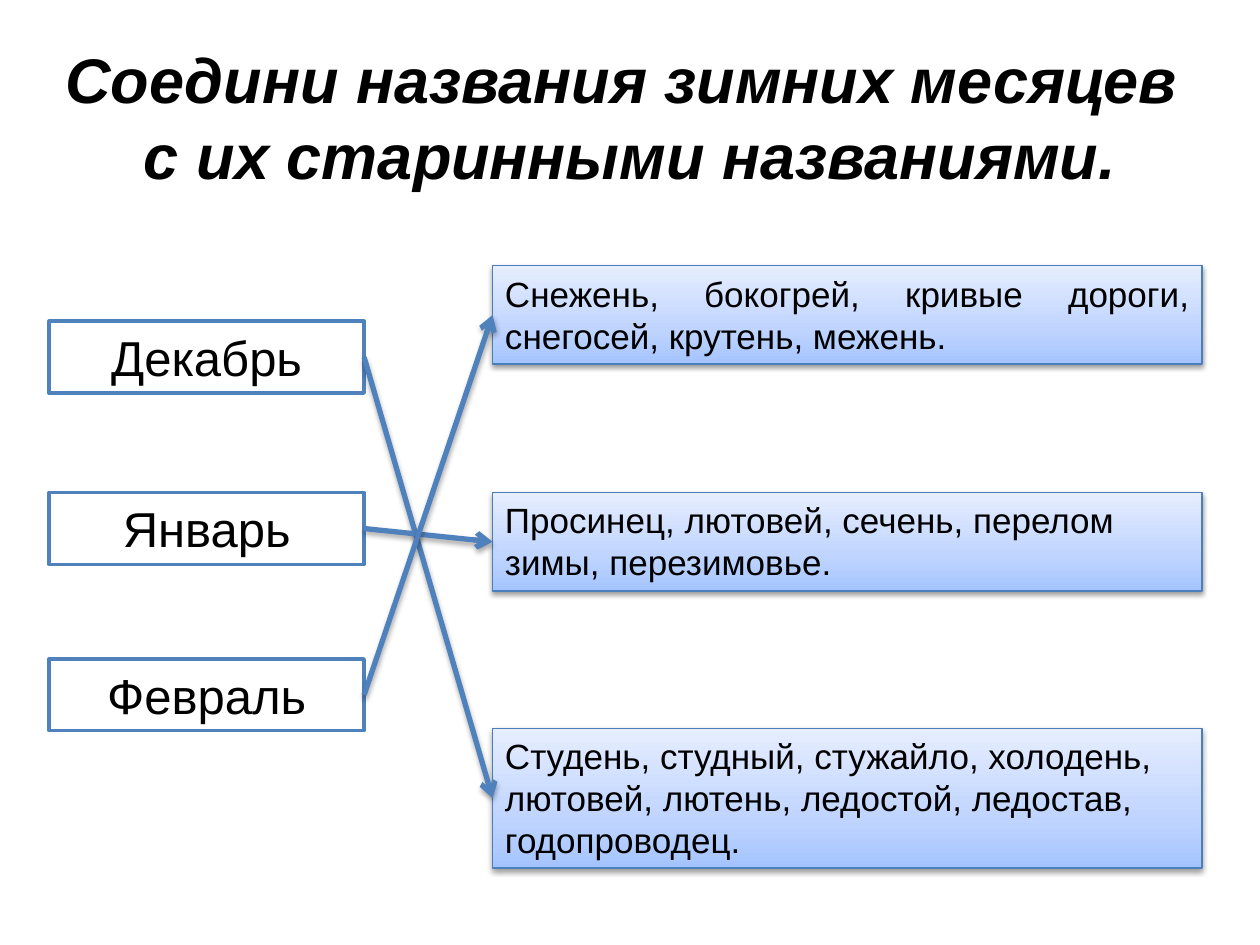
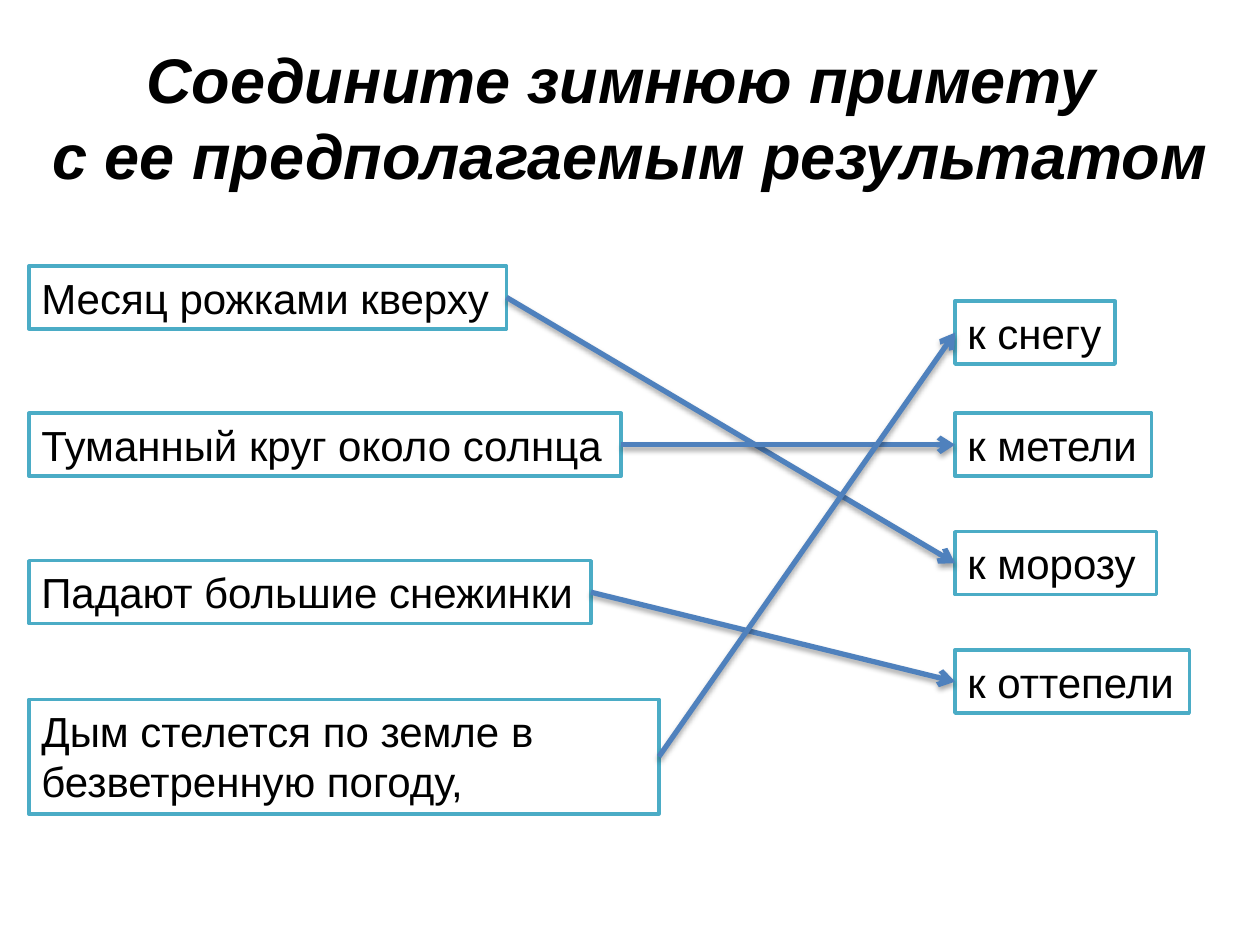
import copy

import pptx
import pptx.dml.color
import pptx.enum.dml
import pptx.enum.shapes
import pptx.enum.text
import pptx.oxml
import pptx.oxml.ns
import pptx.util

RGB = pptx.dml.color.RGBColor
Inches, Pt = pptx.util.Inches, pptx.util.Pt
ALIGN = pptx.enum.text.PP_ALIGN
qn = pptx.oxml.ns.qn

BLACK = RGB(0x00, 0x00, 0x00)
WHITE = RGB(0xFF, 0xFF, 0xFF)
BLUE = RGB(0x4F, 0x81, 0xBD)
EDGE_BLUE = RGB(0x4B, 0x7E, 0xBC)
TEAL = RGB(0x4B, 0xAC, 0xC6)
BLUE_GRADIENT = [
    (0, RGB(0xA4, 0xC4, 0xFF)),
    (0.35, RGB(0xBF, 0xD4, 0xFF)),
    (1, RGB(0xE6, 0xEE, 0xFF)),
]
FONT = "Arial"

MONTH = dict(size=28, align=ALIGN.CENTER, line=BLUE)
OLD_NAME = dict(size=20, line=EDGE_BLUE, weight=0.75, gradient=BLUE_GRADIENT)
SIGN = dict(size=24, line=TEAL, wrap=False)

# Columns: left edge, box format, then boxes as (text, top, width, height, format changes).
# Links: index in the left column, index in the right column.
SLIDES = [
    dict(
        title="Соедини названия зимних месяцев \vс их старинными названиями.",
        left=(0.39, MONTH, [
            ("Декабрь", 2.55, 2.5, 0.57, {}),
            ("Январь", 3.91, 2.5, 0.57, {}),
            ("Февраль", 5.23, 2.5, 0.57, {}),
        ]),
        right=(3.91, OLD_NAME, [
            ("Снежень, бокогрей, кривые дороги, снегосей, крутень, межень.",
             2.11, 5.63, 0.78, dict(align=ALIGN.JUSTIFY)),
            ("Просинец, лютовей, сечень, перелом зимы, перезимовье.",
             3.91, 5.63, 0.78, {}),
            ("Студень, студный, стужайло, холодень, лютовей, лютень, "
             "ледостой, ледостав, годопроводец.", 5.78, 5.63, 1.11, {}),
        ]),
        links=[(0, 2), (1, 1), (2, 0)],
    ),
    dict(
        title="Соедините зимнюю примету \vс ее предполагаемым результатом",
        left=(0.23, SIGN, [
            ("Месяц рожками кверху", 2.11, 3.79, 0.5, {}),
            ("Туманный круг около солнца", 3.28, 4.7, 0.5, {}),
            ("Падают большие снежинки", 4.45, 4.46, 0.5, {}),
            ("Дым стелется по земле в безветренную погоду,",
             5.55, 5, 0.91, dict(wrap=True)),
        ]),
        right=(7.58, SIGN, [
            ("к снегу", 2.39, 1.27, 0.5, {}),
            ("к метели", 3.28, 1.56, 0.5, {}),
            ("к морозу", 4.22, 1.6, 0.5, {}),
            ("к оттепели", 5.16, 1.86, 0.5, {}),
        ]),
        links=[(0, 2), (1, 1), (2, 3), (3, 0)],
    ),
]


def write(tf, text, size, align=ALIGN.LEFT, bold=False, italic=False, wrap=True):
    tf.word_wrap = wrap
    tf.text = text
    p = tf.paragraphs[0]
    p.alignment = align
    for r in p.runs:
        r.font.name, r.font.size = FONT, Pt(size)
        r.font.bold, r.font.italic = bold, italic
        r.font.color.rgb = BLACK


def add_shadow(sp, alpha, distance):
    """Give a shape or connector a soft black shadow falling straight down."""
    effects = pptx.oxml.parse_xml(
        f'<a:effectLst {pptx.oxml.ns.nsdecls("a")}>'
        f'<a:outerShdw blurRad="{Pt(3.1)}" dist="{Pt(distance)}" dir="5400000" rotWithShape="0">'
        f'<a:srgbClr val="{BLACK}"><a:alpha val="{alpha * 1000}"/></a:srgbClr>'
        '</a:outerShdw></a:effectLst>')
    spPr = sp._element.spPr
    for old in spPr.findall(qn("a:effectLst")):
        spPr.remove(old)
    spPr.append(effects)


def fill_gradient(sp, stops):
    sp.fill.gradient()
    sp.fill.gradient_angle = 90
    gs_list = next(sp._element.spPr.iter(qn("a:gsLst")))
    gs_list.append(copy.deepcopy(gs_list[0]))
    for stop, (position, color) in zip(sp.fill.gradient_stops, stops):
        stop.position = position
        stop.color.rgb = color


def add_box(slide, text, x, y, w, h, line, weight=2, gradient=None, **text_format):
    sp = slide.shapes.add_shape(pptx.enum.shapes.MSO_SHAPE.RECTANGLE,
                                Inches(x), Inches(y), Inches(w), Inches(h))
    sp.line.color.rgb = line
    sp.line.width = Pt(weight)
    sp.shadow.inherit = False
    if gradient:
        fill_gradient(sp, gradient)
        add_shadow(sp, alpha=38, distance=1.6)
    else:
        sp.fill.solid()
        sp.fill.fore_color.rgb = WHITE
    tf = sp.text_frame
    tf.vertical_anchor = pptx.enum.text.MSO_ANCHOR.TOP
    write(tf, text, **text_format)
    tf.auto_size = pptx.enum.text.MSO_AUTO_SIZE.SHAPE_TO_FIT_TEXT
    return sp


def add_column(slide, x, style, boxes):
    return [add_box(slide, text, x, y, w, h, **{**style, **changes})
            for text, y, w, h, changes in boxes]


def add_arrow(slide, start, end):
    """Join the right side of start to the left side of end."""
    line = slide.shapes.add_connector(pptx.enum.shapes.MSO_CONNECTOR.STRAIGHT, 0, 0, 0, 0)
    line.begin_connect(start, 3)
    line.end_connect(end, 1)
    line.line.color.rgb = BLUE
    line.line.width = Pt(3)
    line.line._get_or_add_ln().append(pptx.oxml.parse_xml(
        f'<a:tailEnd {pptx.oxml.ns.nsdecls("a")} type="arrow"/>'))
    add_shadow(line, alpha=35, distance=1.8)


def add_title(slide, text):
    title = slide.shapes.title
    title.left, title.top = Inches(0), Inches(0.3)
    title.width, title.height = Inches(10), Inches(1.25)
    title.text_frame.vertical_anchor = pptx.enum.text.MSO_ANCHOR.MIDDLE
    write(title.text_frame, text, size=36, align=ALIGN.CENTER, bold=True, italic=True)
    title.text_frame.auto_size = pptx.enum.text.MSO_AUTO_SIZE.NONE


def main():
    prs = pptx.Presentation()
    prs.slide_width, prs.slide_height = Inches(10), Inches(7.5)
    for content in SLIDES:
        slide = prs.slides.add_slide(prs.slide_layouts[5])
        add_title(slide, content["title"])
        left = add_column(slide, *content["left"])
        right = add_column(slide, *content["right"])
        for start, end in content["links"]:
            add_arrow(slide, left[start], right[end])
    prs.save("out.pptx")


if __name__ == "__main__":
    main()
